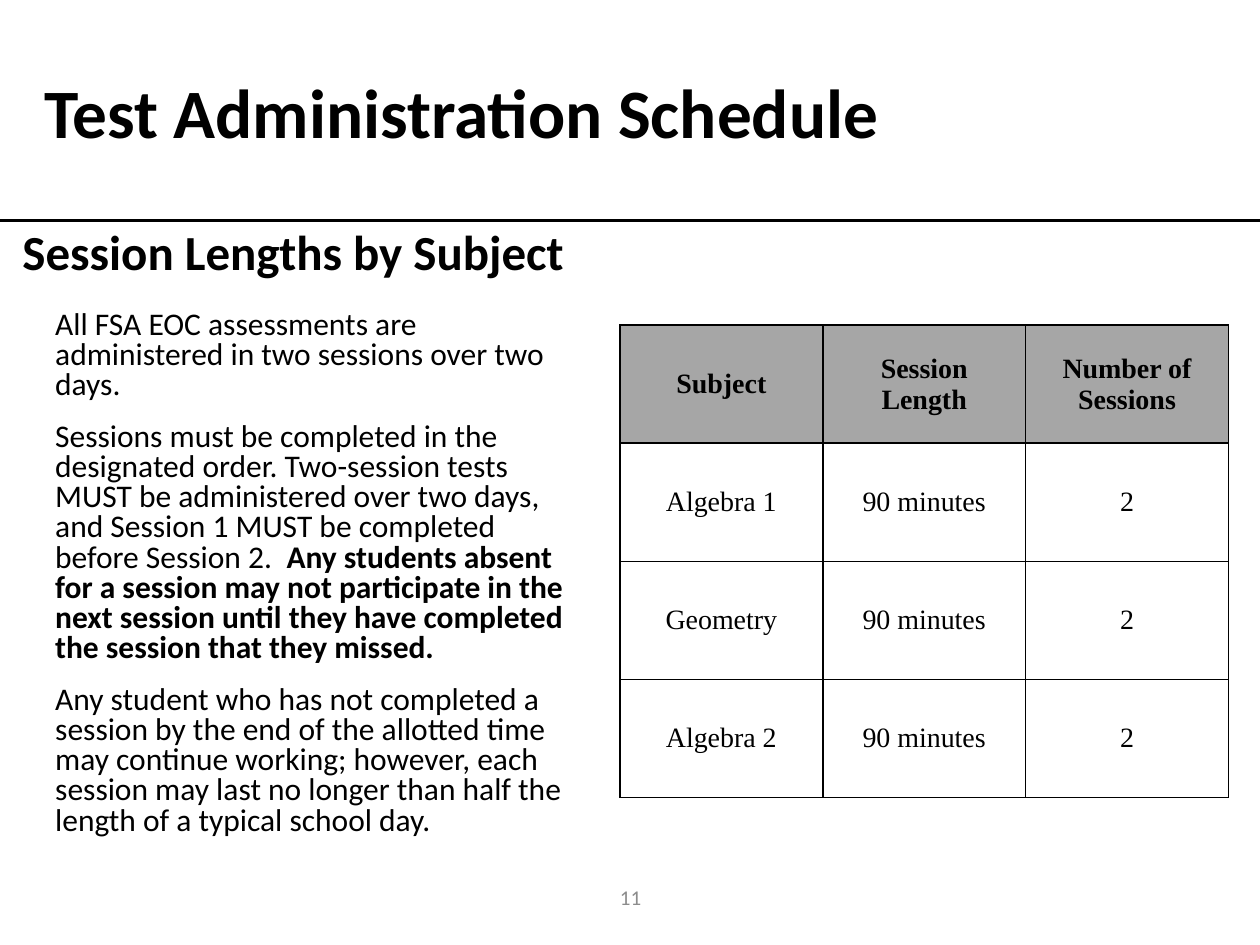
from dataclasses import dataclass

from lxml import etree
from pptx import Presentation
from pptx.dml.color import RGBColor
from pptx.enum.shapes import MSO_CONNECTOR
from pptx.enum.text import MSO_ANCHOR, MSO_AUTO_SIZE, PP_ALIGN
from pptx.oxml.ns import qn
from pptx.util import Inches, Pt

STRAIGHT = MSO_CONNECTOR.STRAIGHT
MIDDLE, TOP = MSO_ANCHOR.MIDDLE, MSO_ANCHOR.TOP
LEFT, CENTER = PP_ALIGN.LEFT, PP_ALIGN.CENTER
FIXED_SIZE = MSO_AUTO_SIZE.NONE
TITLE_ONLY = 5


@dataclass(frozen=True)
class Theme:
    font: str = "Calibri"
    table_font: str = "Times New Roman"
    ink: str = "000000"
    muted: str = "8C8C8C"
    header_fill: str = "A6A6A6"
    cell_fill: str = "FFFFFF"
    title_size: float = 39.6
    heading_size: float = 28
    body_size: float = 18
    table_size: float = 16
    number_size: float = 12
    rule_width: float = 2.25
    border_width: float = 1
    paragraph_gap: float = 6
    line_spacing: float = 0.8


class SlideBuilder:
    def __init__(self, slide, theme):
        self.slide = slide
        self.theme = theme

    def format_run(self, run, size, bold=False, color=None, font=None):
        run.font.name = font or self.theme.font
        run.font.size = Pt(size)
        run.font.bold = bold
        run.font.color.rgb = RGBColor.from_string(color or self.theme.ink)

    def rule(self, y, width):
        line = self.slide.shapes.add_connector(
            STRAIGHT, 0, Inches(y), Inches(width), Inches(y))
        line.line.color.rgb = RGBColor.from_string(self.theme.ink)
        line.line.width = Pt(self.theme.rule_width)
        etree.SubElement(line._element.spPr, qn("a:effectLst"))

    def title(self, text, left, top, width, height):
        title = self.slide.shapes.title
        title.left, title.top = Inches(left), Inches(top)
        title.width, title.height = Inches(width), Inches(height)
        frame = title.text_frame
        frame.text = text
        frame.word_wrap = True
        frame.auto_size = FIXED_SIZE
        frame.vertical_anchor = MIDDLE
        paragraph = frame.paragraphs[0]
        paragraph.alignment = LEFT
        self.format_run(paragraph.runs[0], self.theme.title_size, bold=True)

    def text(self, paragraphs, left, top, width, height, size,
             color=None, align=LEFT, anchor=TOP, spacing=None):
        """Each paragraph is a list of (text, bold) runs."""
        box = self.slide.shapes.add_textbox(
            Inches(left), Inches(top), Inches(width), Inches(height))
        frame = box.text_frame
        frame.word_wrap = True
        frame.vertical_anchor = anchor
        for index, runs in enumerate(paragraphs):
            paragraph = frame.add_paragraph() if index else frame.paragraphs[0]
            paragraph.alignment = align
            paragraph.line_spacing = spacing
            gap = Pt(self.theme.paragraph_gap)
            paragraph.space_before = gap if index else Pt(0)
            paragraph.space_after = gap if index < len(paragraphs) - 1 else Pt(0)
            for text, bold in runs:
                run = paragraph.add_run()
                run.text = text
                self.format_run(run, size, bold, color)

    def border(self, cell):
        properties = cell._tc.get_or_add_tcPr()
        for position, side in enumerate(("lnL", "lnR", "lnT", "lnB")):
            line = etree.Element(
                qn(f"a:{side}"), w=str(Pt(self.theme.border_width)))
            fill = etree.SubElement(line, qn("a:solidFill"))
            etree.SubElement(fill, qn("a:srgbClr"), val=self.theme.ink)
            properties.insert(position, line)

    def table(self, rows, left, top, width, height):
        shape = self.slide.shapes.add_table(
            len(rows), len(rows[0]), Inches(left), Inches(top),
            Inches(width), Inches(height))
        table = shape.table
        for row_index, values in enumerate(rows):
            header = row_index == 0
            fill = self.theme.header_fill if header else self.theme.cell_fill
            for column_index, value in enumerate(values):
                cell = table.cell(row_index, column_index)
                cell.text = value
                cell.vertical_anchor = MIDDLE
                cell.margin_left = cell.margin_right = Inches(0.15)
                cell.fill.solid()
                cell.fill.fore_color.rgb = RGBColor.from_string(fill)
                paragraph = cell.text_frame.paragraphs[0]
                paragraph.alignment = CENTER
                self.format_run(paragraph.runs[0], self.theme.table_size,
                                bold=header, font=self.theme.table_font)
                self.border(cell)


SESSION_RULES = [
    [("All FSA EOC assessments are administered in two sessions over two "
      "days.", False)],
    [("Sessions must be completed in the designated order. Two-session tests "
      "MUST be administered over two days, and Session 1 MUST be completed "
      "before Session 2.  ", False),
     ("Any students absent for a session may not participate in the next "
      "session until they have completed the session that they missed.", True)],
    [("Any student who has not completed a session by the end of the allotted "
      "time may continue working; however, each session may last no longer "
      "than half the length of a typical school day.", False)],
]
SUBJECTS = ("Algebra 1", "Geometry", "Algebra 2")
SESSION_TABLE = [("Subject", "Session Length", "Number of Sessions")]
SESSION_TABLE += [(subject, "90 minutes", "2") for subject in SUBJECTS]


def main():
    presentation = Presentation()
    presentation.slide_width = Inches(10)
    presentation.slide_height = Inches(7.5)
    slide = presentation.slides.add_slide(
        presentation.slide_layouts[TITLE_ONLY])
    theme = Theme()
    builder = SlideBuilder(slide, theme)

    builder.rule(1.75, 10)
    builder.title("Test Administration Schedule", 0.25, 0.28, 7.42, 1.2)
    builder.text([[("11", False)]], 3.42, 6.92, 3.17, 0.4, theme.number_size,
                 color=theme.muted, align=CENTER, anchor=MIDDLE)
    builder.table(SESSION_TABLE, 4.92, 2.58, 4.83, 3.75)
    builder.text([[("Session Lengths by Subject", True)]],
                 0.08, 1.8, 9.48, 0.42, theme.heading_size,
                 spacing=theme.line_spacing)
    builder.text(SESSION_RULES, 0.34, 2.42, 4.24, 4.83, theme.body_size,
                 spacing=theme.line_spacing)
    presentation.save("out.pptx")


if __name__ == "__main__":
    main()
